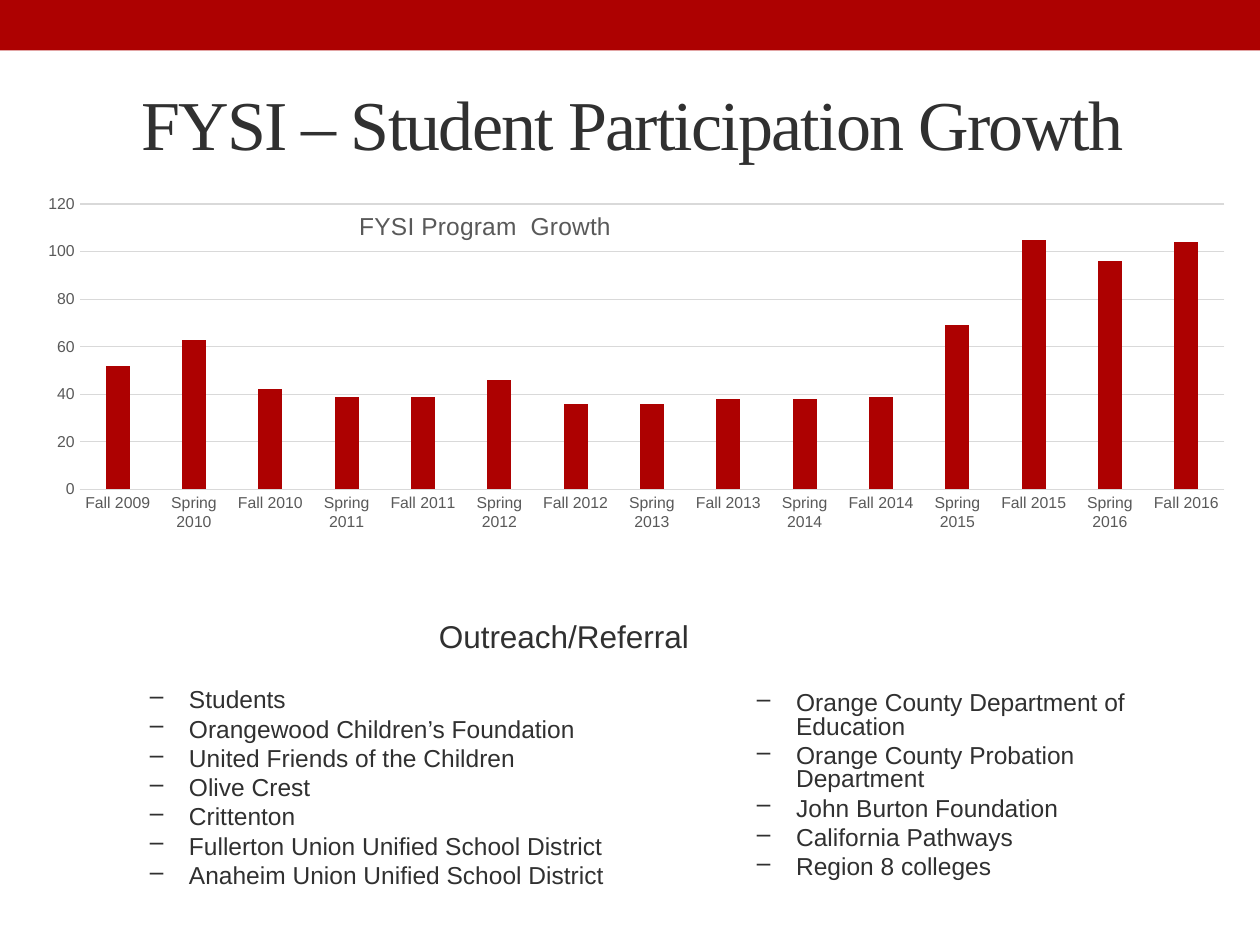
import pptx
import pptx.chart.data
import pptx.dml.color
import pptx.enum.chart
import pptx.enum.shapes
import pptx.enum.text
import pptx.oxml
import pptx.util
from pptx.oxml.ns import nsdecls

Cm, Pt = pptx.util.Cm, pptx.util.Pt
ALIGN = pptx.enum.text.PP_ALIGN
RED, DARK, GREY, RULE = "AD0101", "303030", "595959", "D9D9D9"

TITLE = "FYSI – Student Participation Growth"
CHART_TITLE = "FYSI Program  Growth"
TERMS = [f"{term} {year}" for year in range(2009, 2017)
         for term in ("Spring", "Fall")][1:]
STUDENTS = [52, 63, 42, 39, 39, 46, 36, 36, 38, 38, 39, 69, 105, 96, 104]
HEADING = "Outreach/Referral"
LEFT_PARTNERS = [
    "Students",
    "Orangewood Children’s Foundation",
    "United Friends of the Children",
    "Olive Crest",
    "Crittenton",
    "Fullerton Union Unified School District",
    "Anaheim Union Unified School District",
]
RIGHT_PARTNERS = [
    "Orange County Department of Education",
    "Orange County Probation Department",
    "John Burton Foundation",
    "California Pathways",
    "Region 8 colleges",
]
PLACES = {
    "band": (0, 0, 25.4, 1.02),
    "title": (1.5, 1.09, 22.5, 2.74),
    "chart": (0.74, 3.84, 24.66, 7.65),
    "left": (1.5, 12.47, 19.74, 6.15),
    "right": (13.74, 13.84, 10.62, 4.45),
}


def place(name):
    return [Cm(v) for v in PLACES[name]]


def rgb(value):
    return pptx.dml.color.RGBColor.from_string(value)


def apply(target, **values):
    for name, value in values.items():
        setattr(target, name, value)


def style(font, size, color, name="Arial"):
    apply(font, size=Pt(size), name=name, bold=False)
    font.color.rgb = rgb(color)


def layout_xml(**values):
    parts = "".join(f'<c:{k} val="{v}"/>' for k, v in values.items())
    return pptx.oxml.parse_xml(
        f'<c:layout {nsdecls("c")}><c:manualLayout>{parts}'
        '</c:manualLayout></c:layout>')


def add_band(slide):
    sp = slide.shapes.add_shape(
        pptx.enum.shapes.MSO_SHAPE.RECTANGLE, *place("band"))
    sp.shadow.inherit = False
    sp.fill.solid()
    sp.fill.fore_color.rgb = rgb(RED)
    sp.line.fill.background()


def fill_title(slide):
    sp = slide.shapes.title
    apply(sp, **dict(zip(("left", "top", "width", "height"), place("title"))))
    tf = sp.text_frame
    apply(tf, text=TITLE, word_wrap=True,
          auto_size=pptx.enum.text.MSO_AUTO_SIZE.NONE,
          vertical_anchor=pptx.enum.text.MSO_ANCHOR.MIDDLE)
    p = tf.paragraphs[0]
    p.alignment = ALIGN.CENTER
    r = p.runs[0]
    style(r.font, 40, DARK, "Times New Roman")
    r.font._element.set("spc", "-100")


def add_growth_chart(slide):
    data = pptx.chart.data.CategoryChartData()
    data.categories = TERMS
    data.add_series("Series 1", STUDENTS)
    kinds = pptx.enum.chart
    chart = slide.shapes.add_chart(
        kinds.XL_CHART_TYPE.COLUMN_CLUSTERED, *place("chart"), data).chart
    style(chart.font, 10, "000000")
    apply(chart, has_legend=False, has_title=True)

    title = chart.chart_title
    title.text_frame.text = CHART_TITLE
    style(title.text_frame.paragraphs[0].runs[0].font, 14, GREY)
    title.include_in_layout = True
    for old in title._element.findall(pptx.oxml.ns.qn("c:layout")):
        title._element.remove(old)
    title._element.find(pptx.oxml.ns.qn("c:tx")).addnext(
        layout_xml(xMode="edge", yMode="edge", x=0.26, y=0.04))

    area = chart._chartSpace.chart.plotArea
    for old in area.findall(pptx.oxml.ns.qn("c:layout")):
        area.remove(old)
    area.insert(0, layout_xml(layoutTarget="inner", xMode="edge", yMode="edge",
                              x=0.035, y=0.036, w=0.936, h=0.752))

    plot = chart.plots[0]
    apply(plot, gap_width=219, overlap=-27, vary_by_categories=False)
    fill = plot.series[0].format.fill
    fill.solid()
    fill.fore_color.rgb = rgb(RED)

    cat, val = chart.category_axis, chart.value_axis
    for axis in (cat, val):
        apply(axis, major_tick_mark=kinds.XL_TICK_MARK.NONE,
              minor_tick_mark=kinds.XL_TICK_MARK.NONE)
        style(axis.tick_labels.font, 9, GREY)
    apply(val, minimum_scale=0, maximum_scale=120, major_unit=20,
          has_major_gridlines=True)
    val.format.line.fill.background()
    for line in (cat.format.line, val.major_gridlines.format.line):
        line.width = Pt(0.75)
        line.color.rgb = rgb(RULE)


def add_partners(slide, name, partners, heading=None):
    tf = slide.shapes.add_textbox(*place(name)).text_frame
    tf.word_wrap = True
    lines = ([heading] if heading else []) + partners
    for i, text in enumerate(lines):
        p = tf.paragraphs[0] if i == 0 else tf.add_paragraph()
        is_heading = text == heading
        after_heading = heading and i == 1
        p.line_spacing = 0.8
        p.space_before = Pt(0 if i == 0 else 20 if after_heading else 3.3)
        if is_heading:
            p.alignment = ALIGN.CENTER
        else:
            p.level = 1
            pPr = p._p.get_or_add_pPr()
            pPr.set("marL", str(Cm(2.06)))
            pPr.set("indent", str(Cm(-0.79)))
            pPr.append(pptx.oxml.parse_xml(
                f'<a:buChar {nsdecls("a")} char="–"/>'))
        r = p.add_run()
        r.text = text
        style(r.font, 18 if is_heading else 14, DARK)


def main():
    prs = pptx.Presentation()
    apply(prs, slide_width=Cm(25.4), slide_height=Cm(19.05))
    s = prs.slides.add_slide(prs.slide_layouts[5])
    add_band(s)
    fill_title(s)
    add_growth_chart(s)
    add_partners(s, "left", LEFT_PARTNERS, HEADING)
    add_partners(s, "right", RIGHT_PARTNERS)
    prs.save("out.pptx")


if __name__ == "__main__":
    main()
